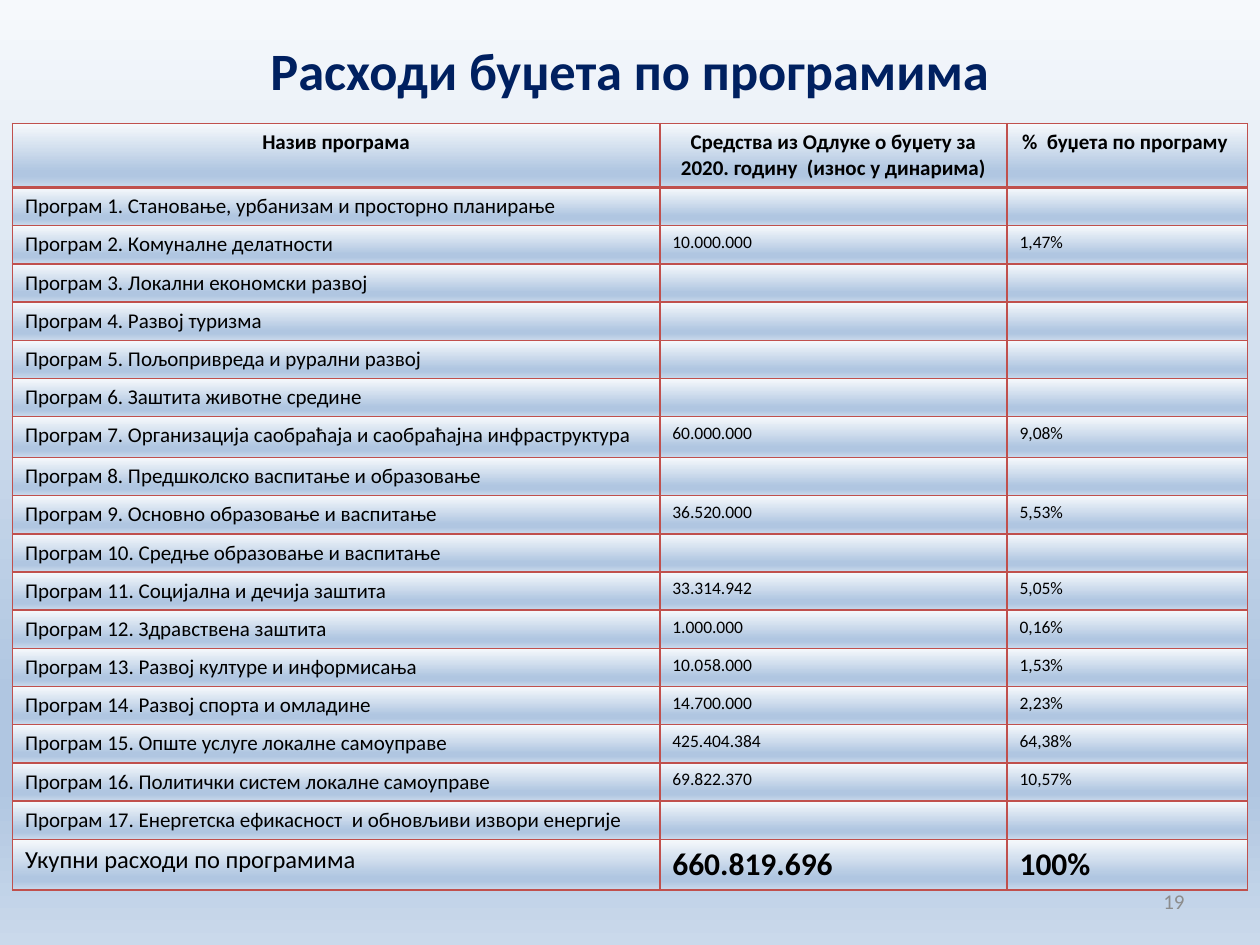
from lxml import etree
from pptx import Presentation
from pptx import util as u
from pptx.dml.color import RGBColor
from pptx.enum import text
from pptx.oxml import ns

PROGRAMS = [
    ("Програм 1. Становање, урбанизам и просторно планирање", "", ""),
    ("Програм 2. Комуналне делатности", "10.000.000", "1,47%"),
    ("Програм 3. Локални економски развој", "", ""),
    ("Програм 4. Развој туризма", "", ""),
    ("Програм 5. Пољопривреда и рурални развој", "", ""),
    ("Програм 6. Заштита животне средине", "", ""),
    ("Програм 7. Организација саобраћаја и саобраћајна инфраструктура", "60.000.000", "9,08%"),
    ("Програм 8. Предшколско васпитање и образовање", "", ""),
    ("Програм 9. Основно образовање и васпитање", "36.520.000", "5,53%"),
    ("Програм 10. Средње образовање и васпитање", "", ""),
    ("Програм 11. Социјална и дечија заштита", "33.314.942", "5,05%"),
    ("Програм 12. Здравствена заштита", "1.000.000", "0,16%"),
    ("Програм 13. Развој културе и информисања", "10.058.000", "1,53%"),
    ("Програм 14. Развој спорта и омладине", "14.700.000", "2,23%"),
    ("Програм 15. Опште услуге локалне самоуправе", "425.404.384", "64,38%"),
    ("Програм 16. Политички систем локалне самоуправе", "69.822.370", "10,57%"),
    ("Програм 17. Енергетска ефикасност  и обновљиви извори енергије", "", ""),
]
HEADER = ("Назив програма",
          "Средства из Одлуке о буџету за 2020. годину  (износ у динарима)",
          "%  буџета по програму ")
TOTAL = ("Укупни расходи по програмима", "660.819.696", "100%")

# Text formats of the table, one per column
HEADER_FORMATS = [{"size": u.Pt(12), "bold": True}] * 3
BODY_FORMATS = [{"size": u.Pt(12)}] + [{"size": u.Pt(10)}] * 2
TOTAL_FORMATS = [{"size": u.Pt(14)}] + [{"size": u.Pt(18), "bold": True}] * 2


def color(hex_string):
    return RGBColor.from_string(hex_string)


def add_element(parent, tag, **attributes):
    return etree.SubElement(parent, ns.qn(tag), **attributes)


class SlideBuilder:
    font = "Calibri"
    border = "C0504D"
    gradient = [(0, "F6F9FC"), (74, "B0C6E1"), (83, "B0C6E1"), (100, "CAD9EB")]

    def __init__(self, slide):
        self.slide = slide

    def paint(self, fill, element):
        """Fill with the vertical gradient; element is the owner of the fill."""
        fill.gradient()
        fill.gradient_angle = 270
        stops = next(element.iter(ns.qn("a:gsLst")))
        for stop in list(stops):
            stops.remove(stop)
        for position, value in self.gradient:
            stop = add_element(stops, "a:gs", pos=str(position * 1000))
            add_element(stop, "a:srgbClr", val=value)

    def background(self):
        self.paint(self.slide.background.fill, self.slide._element)

    def add_text(self, paragraph, content, align, hex_string, formats):
        paragraph.alignment = align
        if not content:
            add_element(paragraph._p, "a:endParaRPr", sz=str(int(formats["size"].pt * 100)))
            return
        run = paragraph.add_run()
        run.text = content
        for name, value in {"name": self.font, "bold": False, **formats}.items():
            setattr(run.font, name, value)
        run.font.color.rgb = color(hex_string)

    def text_box(self, content, box, align, hex_string, **formats):
        frame = self.slide.shapes.add_textbox(*map(u.Cm, box)).text_frame
        frame.word_wrap = True
        frame.vertical_anchor = text.MSO_ANCHOR.MIDDLE
        self.add_text(frame.paragraphs[0], content, align, hex_string, formats)

    def borders(self, cell, top, bottom):
        properties = cell._tc.get_or_add_tcPr()
        widths = {"a:lnL": 1, "a:lnR": 1, "a:lnT": top, "a:lnB": bottom}
        for index, (side, points) in enumerate(widths.items()):
            line = add_element(properties, side, w=str(int(u.Pt(points))))
            add_element(add_element(line, "a:solidFill"), "a:srgbClr", val=self.border)
            properties.insert(index, line)

    def table(self, rows, formats, left, top, widths, heights):
        table = self.slide.shapes.add_table(
            len(rows), len(widths), u.Cm(left), u.Cm(top),
            u.Cm(sum(widths)), u.Cm(sum(heights))).table
        table.first_row = table.horz_banding = False
        for column, width in zip(table.columns, widths):
            column.width = u.Cm(width)
        for index, height in enumerate(heights):
            table.rows[index].height = u.Cm(height)
            align = text.PP_ALIGN.LEFT if index else text.PP_ALIGN.CENTER
            for cell, content, style in zip(table.rows[index].cells, rows[index], formats[index]):
                self.paint(cell.fill, cell._tc)
                # The rule below the header is thicker
                self.borders(cell, top=2 if index == 1 else 1, bottom=1 if index else 2)
                self.add_text(cell.text_frame.paragraphs[0], content, align, "000000", style)


def main():
    presentation = Presentation()
    presentation.slide_width, presentation.slide_height = u.Cm(25.4), u.Cm(19.05)
    builder = SlideBuilder(presentation.slides.add_slide(presentation.slide_layouts[6]))
    builder.background()

    # Title and page number
    builder.text_box("Расходи буџета по програмима", (1.88, 0.33, 21.64, 2.16),
                     text.PP_ALIGN.CENTER, "002060", size=u.Pt(30), bold=True)
    builder.text_box("19", (18.2, 17.66, 5.93, 1.01),
                     text.PP_ALIGN.RIGHT, "8C8C8C", size=u.Pt(12))

    # Budget table: one height for all programs, except the long name of program 7
    heights = [1.29] + [0.77] * len(PROGRAMS) + [1.02]
    heights[7] = 0.82
    builder.table([HEADER, *PROGRAMS, TOTAL],
                  [HEADER_FORMATS, *[BODY_FORMATS] * len(PROGRAMS), TOTAL_FORMATS],
                  left=0.25, top=2.49, widths=[13.05, 7, 4.85], heights=heights)

    presentation.save("out.pptx")


if __name__ == "__main__":
    main()
